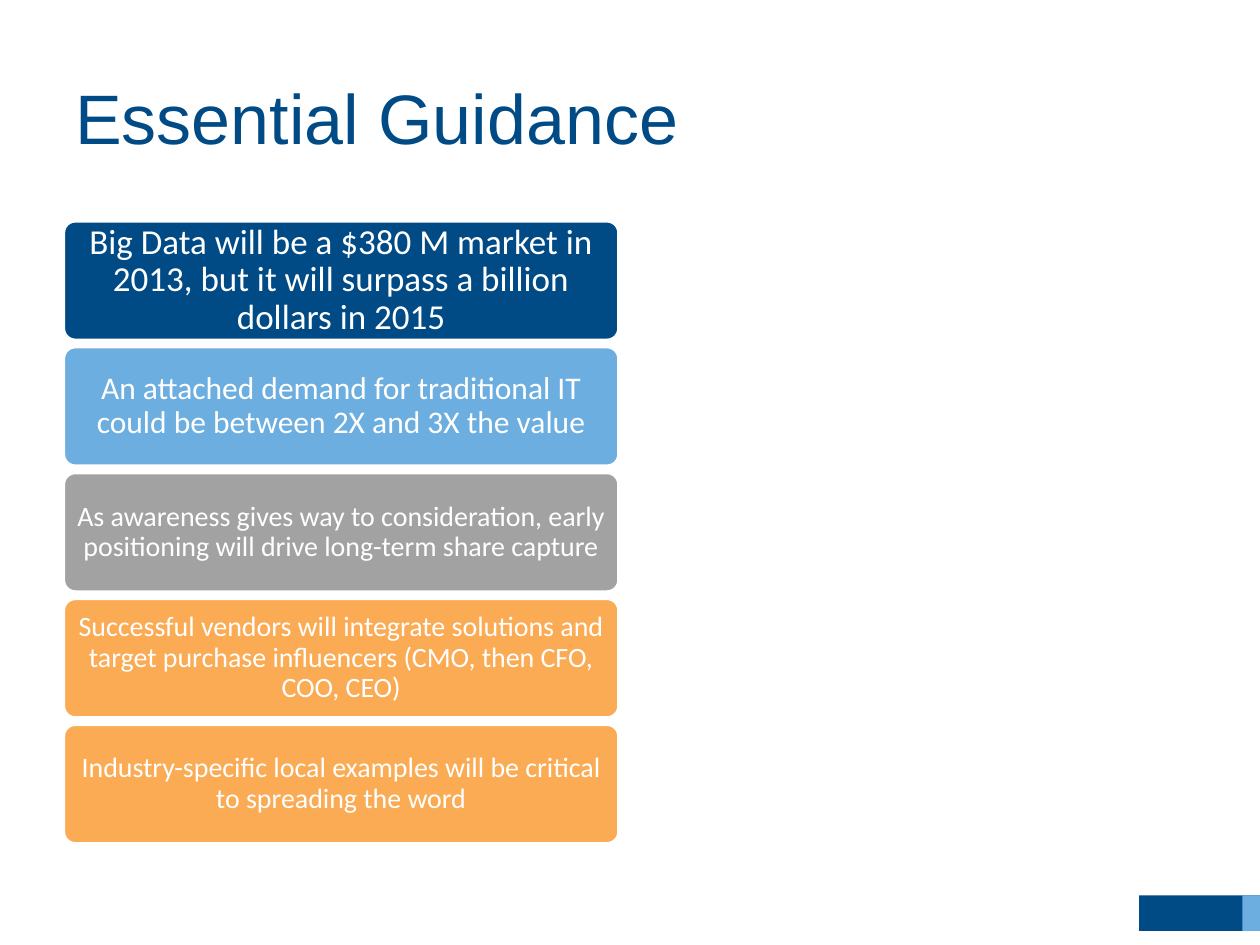
from pptx import Presentation
from pptx.dml.color import RGBColor
from pptx.enum.shapes import MSO_SHAPE
from pptx.enum.text import MSO_ANCHOR, PP_ALIGN
from pptx.util import Pt

NAVY, SKY, GREY, ORANGE, WHITE = "004B85", "6CAEDF", "A2A2A2", "FAAB53", "FFFFFF"

GUIDANCE = [
    ("Big Data will be a $380 M market in 2013, but it will surpass a billion dollars in 2015", NAVY, 20),
    ("An attached demand for traditional IT could be between 2X and 3X the value", SKY, 18),
    ("As awareness gives way to consideration, early positioning will drive long-term share capture", GREY, 16),
    ("Successful vendors will integrate solutions and target purchase influencers (CMO, then CFO, COO, CEO)",
     ORANGE, 16),
    ("Industry-specific local examples will be critical to spreading the word", ORANGE, 16),
]


def color(value):
    return RGBColor.from_string(value)


def add_block(page, preset, left, top, width, height, fill):
    block = page.shapes.add_shape(preset, Pt(left), Pt(top), Pt(width), Pt(height))
    block.shadow.inherit = False
    block.fill.solid()
    block.fill.fore_color.rgb = color(fill)
    block.line.fill.background()
    return block


def write(frame, text, font_name, size, fill):
    """Fill a frame with one vertically centred paragraph and return it."""
    frame.word_wrap = True
    frame.vertical_anchor = MSO_ANCHOR.MIDDLE
    para = frame.paragraphs[0]
    para.text = text
    para.font.name = font_name
    para.font.size = Pt(size)
    para.font.color.rgb = color(fill)
    return para


def add_title(page, text, left, top, width, height):
    box = page.shapes.add_textbox(Pt(left), Pt(top), Pt(width), Pt(height))
    write(box.text_frame, text, "Arial", 40, NAVY)


def add_guidance_list(page, items, left, top, width, height, gap):
    """Stack equal rounded cards, one per item, to fill the box."""
    card_height = (height - gap * (len(items) - 1)) / len(items)
    for index, (text, fill, size) in enumerate(items):
        card_top = top + index * (card_height + gap)
        card = add_block(page, MSO_SHAPE.ROUNDED_RECTANGLE, left, card_top, width, card_height, fill)
        card.adjustments[0] = 0.1
        card.line.color.rgb = color(WHITE)
        card.line.width = Pt(2)
        frame = card.text_frame
        inset = Pt(0.3 * size)
        frame.margin_left = frame.margin_right = inset
        frame.margin_top = frame.margin_bottom = inset
        para = write(frame, text, "Calibri", size, WHITE)
        para.alignment = PP_ALIGN.CENTER
        para.line_spacing = 0.9


def add_corner_bar(page, left, top, width, height, tip_width):
    add_block(page, MSO_SHAPE.RECTANGLE, left, top, width, height, NAVY)
    add_block(page, MSO_SHAPE.RECTANGLE, left + width - tip_width, top, tip_width, height, SKY)


def main():
    deck = Presentation()
    deck.slide_width, deck.slide_height = Pt(720), Pt(540)
    page = deck.slides.add_slide(deck.slide_layouts[6])
    add_corner_bar(page, 651, 511.7, 69, 20.2, 10.1)
    add_title(page, "Essential Guidance", 36, 21.6, 648, 90)
    add_guidance_list(page, GUIDANCE, 36.2, 126.2, 317.5, 356, 3.6)
    deck.save("out.pptx")


if __name__ == "__main__":
    main()
